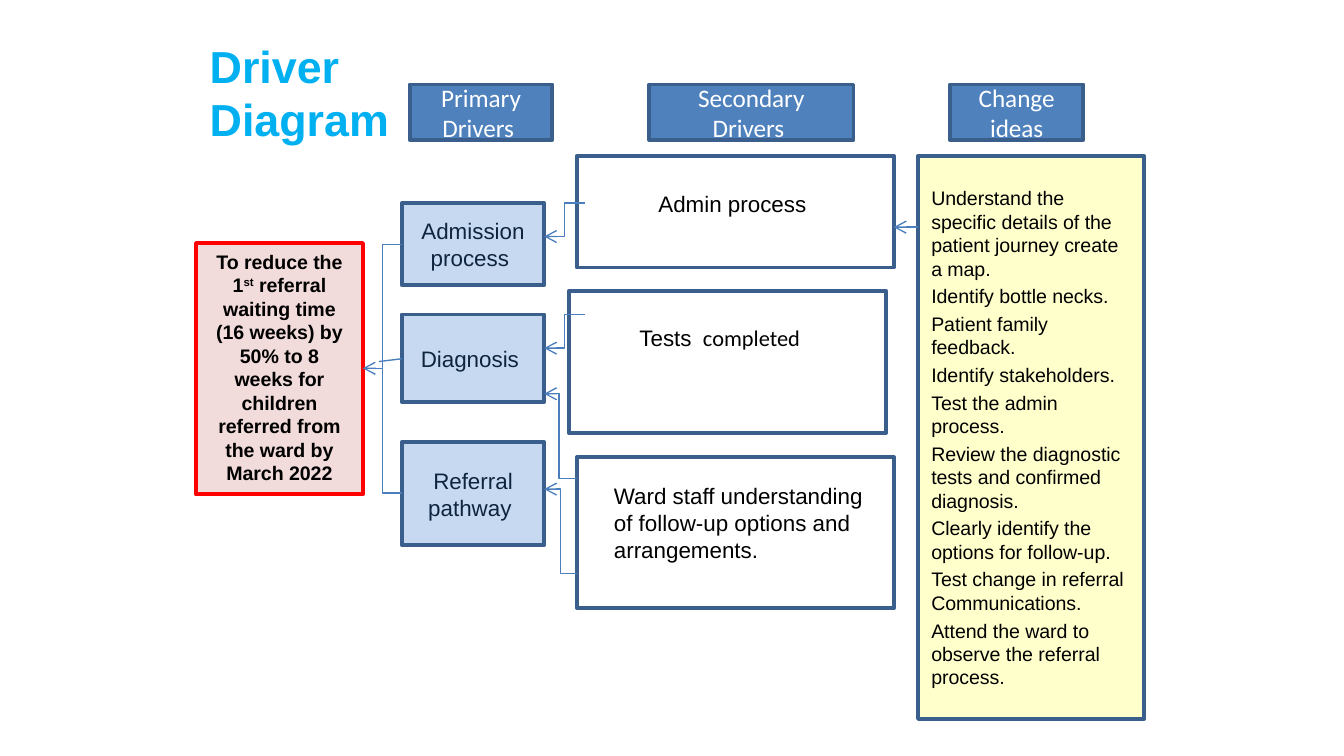
import lxml.etree
import pptx
import pptx.dml.color
import pptx.enum.shapes
import pptx.enum.text
import pptx.oxml.ns
import pptx.util

Pt = pptx.util.Pt
qn = pptx.oxml.ns.qn
ALIGN = pptx.enum.text.PP_ALIGN
ANCHOR = pptx.enum.text.MSO_ANCHOR
FIT = pptx.enum.text.MSO_AUTO_SIZE
RECTANGLE = pptx.enum.shapes.MSO_SHAPE.RECTANGLE
CONNECTOR = pptx.enum.shapes.MSO_CONNECTOR

COLOURS = {
    name: pptx.dml.color.RGBColor.from_string(value)
    for name, value in {
        "title": "00B0F0", "aim": "F2DCDB", "aim_edge": "FF0000",
        "header": "4F81BD", "edge": "3A5F8C", "primary": "C6D9F1",
        "navy": "0F243E", "ideas": "FFFFCC", "link": "4B7EBC",
        "black": "000000", "white": "FFFFFF",
    }.items()
}

deck = pptx.Presentation()
deck.slide_width, deck.slide_height = Pt(720), Pt(405)
page = deck.slides.add_slide(deck.slide_layouts[5])


def add_box(place, fill=None, edge="edge", width=2):
    box = page.shapes.add_shape(RECTANGLE, *map(Pt, place))
    box.shadow.inherit = False
    if fill:
        box.fill.solid()
        box.fill.fore_color.rgb = COLOURS[fill]
    else:
        box.fill.background()
    box.line.color.rgb = COLOURS[edge]
    box.line.width = Pt(width)
    box.text_frame.word_wrap = True
    box.text_frame.vertical_anchor = ANCHOR.MIDDLE
    return box


def add_run(para, text, size, colour="black", font="Arial", bold=False):
    span = para.add_run()
    span.text = text
    span.font.name = font
    span.font.size = Pt(size)
    span.font.bold = bold
    span.font.color.rgb = COLOURS[colour]
    return span


title = page.shapes.title
title.left, title.top, title.width, title.height = map(Pt, (105.1, 15.1, 123.1, 68.4))
title.text_frame.word_wrap = True
title.text_frame.auto_size = FIT.NONE
title.text_frame.vertical_anchor = ANCHOR.MIDDLE
title.text_frame.paragraphs[0].alignment = ALIGN.LEFT
add_run(title.text_frame.paragraphs[0], "Driver Diagram", 24, "title", bold=True)

aim = add_box((105.1, 130.3, 89.3, 134.6), "aim", "aim_edge", 2.25)
aim.text_frame.vertical_anchor = ANCHOR.TOP
aim_para = aim.text_frame.paragraphs[0]
aim_para.alignment = ALIGN.CENTER
add_run(aim_para, "To reduce the 1", 10.5, bold=True)
ordinal = add_run(aim_para, "st", 10.5, bold=True)
ordinal.font._element.set("baseline", "30000")
add_run(
    aim_para,
    " referral waiting time (16 weeks) by 50% to 8 weeks "
    "for children referred from the ward by March 2022",
    10.5, bold=True,
)

headers = [
    ("Primary Drivers ", 219.6, 76.3),
    ("Secondary Drivers ", 347.8, 109.4),
    ("Change ideas", 509, 71.3),
]
for text, left, width in headers:
    box = add_box((left, 45.2, width, 29.8), "header")
    para = box.text_frame.paragraphs[0]
    para.alignment = ALIGN.CENTER
    add_run(para, text, 13.5, "white", "Calibri")

primary_drivers = [
    ("Admission process ", 108.9, 44),
    ("Diagnosis ", 168.5, 47),
    ("Referral pathway ", 236.8, 55.3),
]
for text, top, height in primary_drivers:
    box = add_box((215.3, top, 76.3, height), "primary")
    para = box.text_frame.paragraphs[0]
    para.alignment = ALIGN.CENTER
    add_run(para, text, 12, "navy")

for left, top, height in [(309, 83.5, 59.8), (304.7, 155.8, 76.3), (309, 245, 80.8)]:
    add_box((left, top, 170, height))

ideas = [
    "Understand the specific details of the patient journey create a map.",
    "Identify bottle necks.",
    "Patient family feedback.",
    "Identify stakeholders.",
    "Test the admin process.",
    "Review the diagnostic tests and confirmed diagnosis.",
    "Clearly identify the options for follow-up.",
    "Test change in referral Communications.",
    "Attend the ward to observe the referral process.",
]
ideas_frame = add_box((491.8, 83.5, 121, 301.7), "ideas").text_frame
for index, idea in enumerate(ideas):
    para = ideas_frame.add_paragraph() if index else ideas_frame.paragraphs[0]
    para.alignment = ALIGN.LEFT
    if index:
        para.space_before = Pt(2.2)
    add_run(para, idea, 10.5)

links = [
    (CONNECTOR.ELBOW, (215.3, 131, 194.4, 197.3), True, None),
    (CONNECTOR.ELBOW, (194.4, 197.3, 215.3, 264.2), False, None),
    (CONNECTOR.STRAIGHT, (215.3, 192.2, 203, 193.7), False, None),
    (CONNECTOR.ELBOW, (313.2, 108.7, 291.6, 126.7), True, None),
    (CONNECTOR.ELBOW, (313.2, 168.5, 291.6, 186.5), True, None),
    (CONNECTOR.ELBOW, (309, 307.4, 291.6, 262.1), True, None),
    (CONNECTOR.ELBOW, (309, 256.3, 291.6, 211), True, 0.55),
    (CONNECTOR.STRAIGHT, (491.8, 121.7, 478.8, 121.7), True, None),
]
for kind, ends, arrow, bend in links:
    link = page.shapes.add_connector(kind, *map(Pt, ends))
    link.line.color.rgb = COLOURS["link"]
    link.line.width = Pt(0.75)
    properties = link._element.spPr
    if arrow:
        lxml.etree.SubElement(properties.find(qn("a:ln")), qn("a:tailEnd"), type="arrow")
    if bend:
        guides = properties.find(qn("a:prstGeom")).find(qn("a:avLst"))
        lxml.etree.SubElement(
            guides, qn("a:gd"), name="adj1", fmla=f"val {round(bend * 100000)}"
        )
    lxml.etree.SubElement(properties, qn("a:effectLst"))

secondary_drivers = [
    ((345.6, 98.6, 101.5, 21.6), [[("Admin process", "Arial")]]),
    ((335.5, 169.9, 100.8, 21.6), [[("Tests ", "Arial"), (" completed", "Calibri")]]),
    (
        (321.8, 254.9, 152.6, 51.1),
        [
            [("Ward staff understanding", "Arial")],
            [("of follow-up options and", "Arial")],
            [("arrangements.", "Arial")],
        ],
    ),
]
for place, lines in secondary_drivers:
    frame = page.shapes.add_textbox(*map(Pt, place)).text_frame
    frame.word_wrap = False
    frame.auto_size = FIT.SHAPE_TO_FIT_TEXT
    for index, spans in enumerate(lines):
        para = frame.add_paragraph() if index else frame.paragraphs[0]
        for text, font in spans:
            add_run(para, text, 12, font=font)

deck.save("out.pptx")
